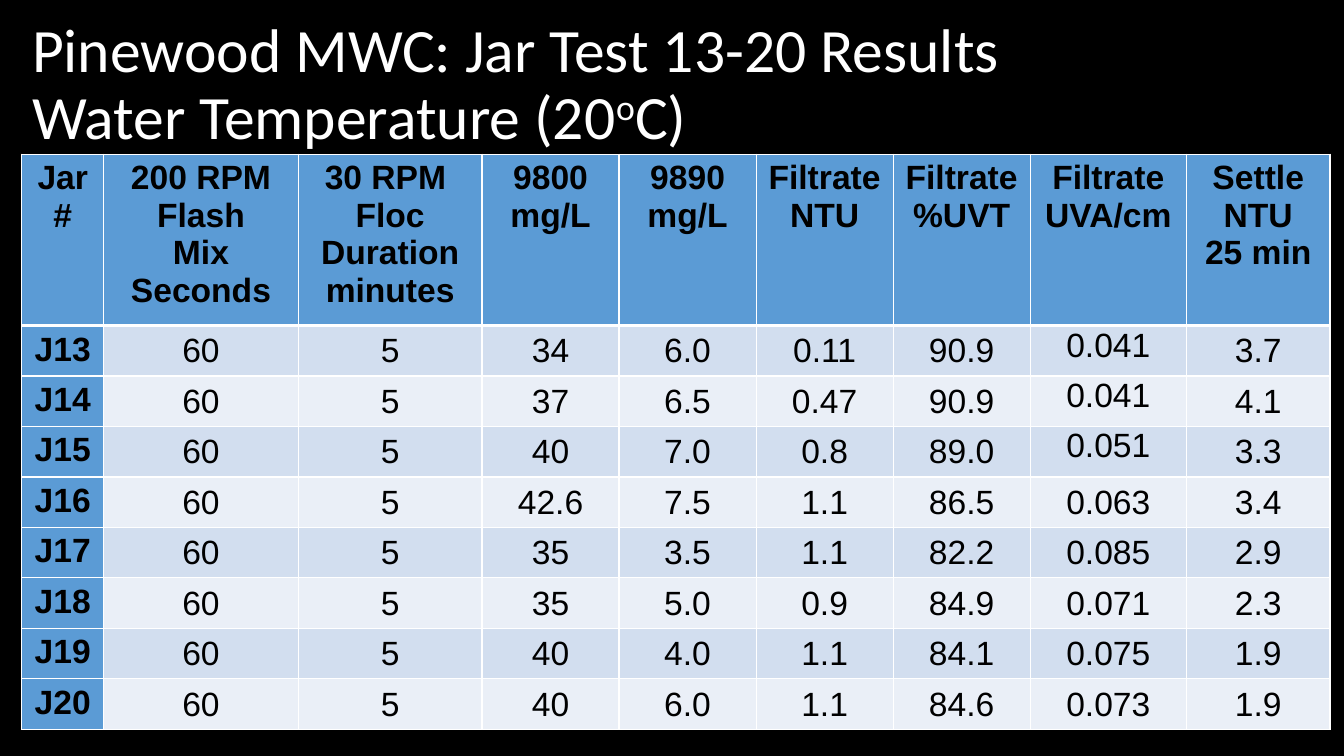
from lxml.etree import SubElement
from pptx import Presentation
from pptx.dml.color import RGBColor
from pptx.enum.text import MSO_ANCHOR, PP_ALIGN
from pptx.oxml.ns import qn
from pptx.util import Pt

COLORS = {
    "background": "000000",
    "title": "FFFFFF",
    "text": "000000",
    "border": "FFFFFF",
    "header": "5B9BD5",
    "odd": "D2DEEF",
    "even": "EAEFF7",
}

SLIDE_SIZE = (960, 540)
TITLE_BOX = (15.84, 9.36, 878.4, 104.4)
TABLE_BOX = (15.6, 110.16, 934.56, 386)
COLUMN_WIDTHS = [58.5, 139, 131.3, 97.9, 97.9, 97.9, 97.9, 111.7, 102.46]
ROW_HEIGHT = 34
UVA_COLUMN = 7
TOP_ANCHORED_ROWS = (1, 2, 3)

HEADERS = [
    "Jar\v#",
    "200 RPM\nFlash\nMix\nSeconds",
    "30 RPM \nFloc\nDuration\nminutes",
    "9800\nmg/L",
    "9890\nmg/L",
    "Filtrate\nNTU",
    "Filtrate\n%UVT",
    "Filtrate\nUVA/cm",
    "Settle\nNTU\n25 min",
]

JAR_TESTS = [
    ["J13", "60", "5", "34", "6.0", "0.11", "90.9", "0.041", "3.7"],
    ["J14", "60", "5", "37", "6.5", "0.47", "90.9", "0.041", "4.1"],
    ["J15", "60", "5", "40", "7.0", "0.8", "89.0", "0.051", "3.3"],
    ["J16", "60", "5", "42.6", "7.5", "1.1", "86.5", "0.063", "3.4"],
    ["J17", "60", "5", "35", "3.5", "1.1", "82.2", "0.085", "2.9"],
    ["J18", "60", "5", "35", "5.0", "0.9", "84.9", "0.071", "2.3"],
    ["J19", "60", "5", "40", "4.0", "1.1", "84.1", "0.075", "1.9"],
    ["J20", "60", "5", "40", "6.0", "1.1", "84.6", "0.073", "1.9"],
]


def color(name):
    return RGBColor.from_string(COLORS[name])


def style_font(font, name, size, color_name, bold=False):
    font.name = name
    font.size = Pt(size)
    font.bold = bold
    font.color.rgb = color(color_name)


def add_title(page, box):
    frame = page.shapes.add_textbox(*map(Pt, box)).text_frame
    frame.word_wrap = True
    frame.vertical_anchor = MSO_ANCHOR.MIDDLE
    para = frame.paragraphs[0]
    para.line_spacing = 0.9
    style_font(para.font, "Calibri", 44, "title")
    para.add_run().text = "Pinewood MWC: Jar Test 13-20 Results"
    para.add_line_break()
    para.add_run().text = "Water Temperature (20"
    degree = para.add_run()
    degree.text = "o"
    degree._r.get_or_add_rPr().set("baseline", "30000")
    para.add_run().text = "C)"


def set_borders(cell, widths):
    properties = cell._tc.get_or_add_tcPr()
    for side, width in widths.items():
        line = SubElement(properties, qn(f"a:ln{side}"), w=str(Pt(width)))
        fill = SubElement(line, qn("a:solidFill"))
        SubElement(fill, qn("a:srgbClr"), val=COLORS["border"])


def fill_cell(cell, text, row, column):
    is_header = row == 0
    is_label = is_header or column == 0
    set_borders(cell, {
        "L": 1,
        "R": 1,
        "T": 3 if row == 1 else 1,
        "B": 3 if is_header else 1,
    })
    cell.fill.solid()
    band = "odd" if row % 2 else "even"
    cell.fill.fore_color.rgb = color("header" if is_label else band)
    if not is_label:
        cell.margin_left = cell.margin_right = cell.margin_top = Pt(0.72)
        cell.margin_bottom = Pt(0)
        if column != UVA_COLUMN or row not in TOP_ANCHORED_ROWS:
            cell.vertical_anchor = MSO_ANCHOR.MIDDLE
    cell.text_frame.text = text
    for para in cell.text_frame.paragraphs:
        para.alignment = PP_ALIGN.CENTER
        style_font(para.font, "Arial", 24, "text", is_label)


def add_results_table(page, box):
    rows = [HEADERS] + JAR_TESTS
    table = page.shapes.add_table(len(rows), len(HEADERS), *map(Pt, box)).table
    for column, width in zip(table.columns, COLUMN_WIDTHS):
        column.width = Pt(width)
    for row in table.rows:
        row.height = Pt(ROW_HEIGHT)
    table.rows[0].height = Pt(box[3] - ROW_HEIGHT * len(JAR_TESTS))
    for row, texts in enumerate(rows):
        for column, text in enumerate(texts):
            fill_cell(table.cell(row, column), text, row, column)


def main():
    deck = Presentation()
    deck.slide_width, deck.slide_height = map(Pt, SLIDE_SIZE)
    page = deck.slides.add_slide(deck.slide_layouts[6])
    page.background.fill.solid()
    page.background.fill.fore_color.rgb = color("background")
    add_title(page, TITLE_BOX)
    add_results_table(page, TABLE_BOX)
    deck.save("out.pptx")


if __name__ == "__main__":
    main()
